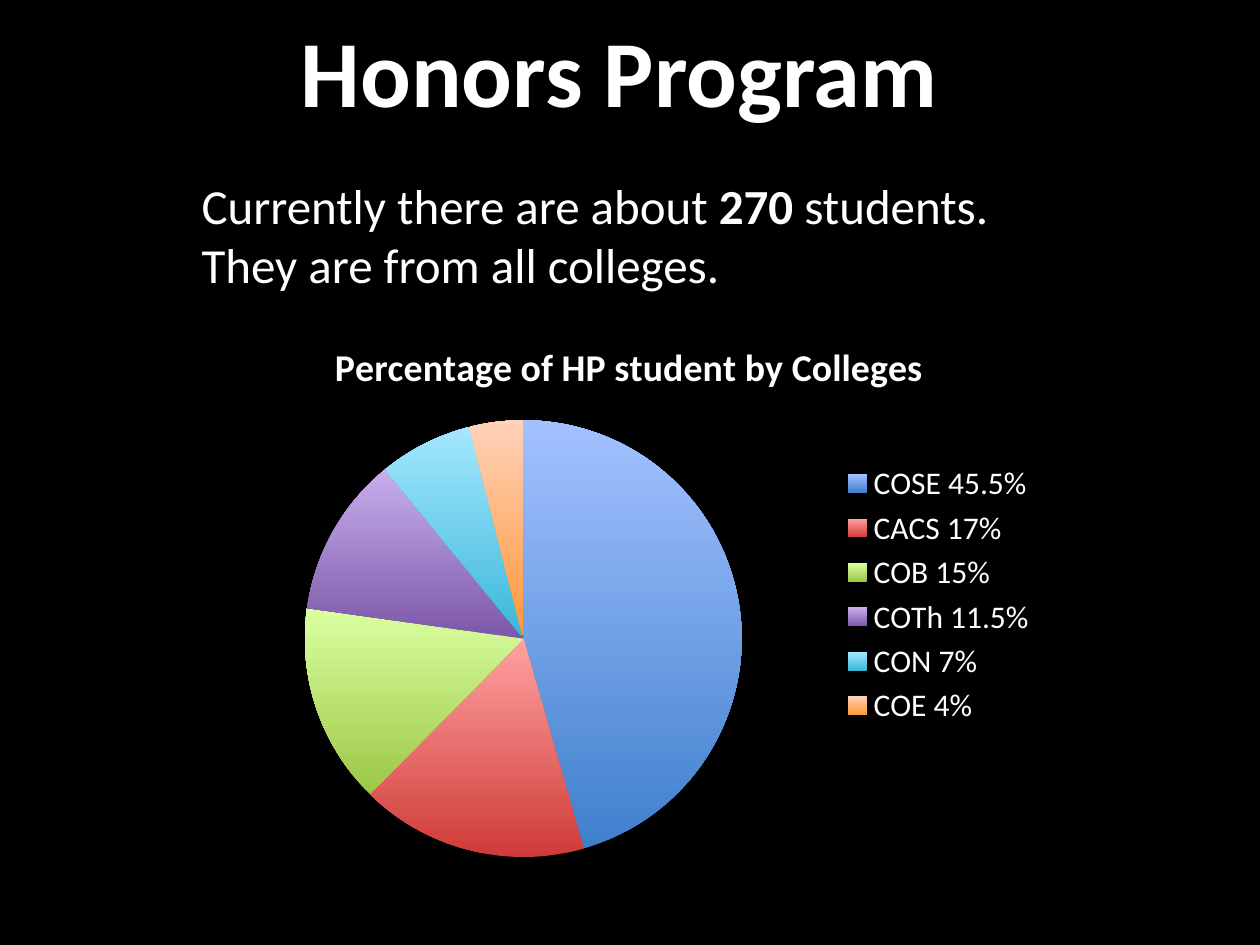
from pptx import Presentation
from pptx import util as u
from pptx.chart import data as chart_data
from pptx.dml import color
from pptx.enum import chart as charts, text

COLORS = {"background": "000000", "text": "FFFFFF"}
COLLEGES = {
    "COSE 45.5%": (46, "3F80CD", "A3C1FF"),
    "CACS 17%": (17, "CF3B38", "FFA2A1"),
    "COB 15%": (15, "9CC746", "DAFFA0"),
    "COTh 11.5%": (12, "7C57A8", "C7AEED"),
    "CON 7%": (7, "39B7D8", "A5E7FF"),
    "COE 4%": (4, "FF9637", "FFD2B9"),
}
CHART_TITLE = "Percentage of HP student by Colleges"


def rgb(value):
    """Return the colour of a hex string."""
    return color.RGBColor.from_string(value)


def style_font(font, size, bold=False):
    """Apply the slide's typeface and text colour."""
    for name, value in {"name": "Calibri", "size": u.Pt(size), "bold": bold}.items():
        setattr(font, name, value)
    font.color.rgb = rgb(COLORS["text"])


def place(region, box):
    """Move a placeholder to a box given in inches."""
    for name, value in zip(("left", "top", "width", "height"), box):
        setattr(region, name, u.Inches(value))


def write_text(region, box, runs, size, align, anchor):
    """Fill a placeholder with one paragraph of (words, bold) runs."""
    place(region, box)
    frame = region.text_frame
    for name, value in {"word_wrap": True, "vertical_anchor": anchor,
                        "auto_size": text.MSO_AUTO_SIZE.NONE}.items():
        setattr(frame, name, value)
    paragraph = frame.paragraphs[0]
    paragraph.alignment = align
    for words, bold in runs:
        run = paragraph.add_run()
        run.text = words
        style_font(run.font, size, bold)


def add_college_pie(slide, box):
    """Draw the shares of the colleges as a pie with a legend."""
    shares = chart_data.CategoryChartData()
    shares.categories = list(COLLEGES)
    shares.add_series(CHART_TITLE, [share for share, _, _ in COLLEGES.values()])
    pie = slide.shapes.add_chart(
        charts.XL_CHART_TYPE.PIE, *map(u.Inches, box), shares).chart
    style_font(pie.font, 18)

    pie.has_title = True
    heading = pie.chart_title.text_frame
    heading.text = CHART_TITLE
    style_font(heading.paragraphs[0].runs[0].font, 21.6, True)

    pie.has_legend = True
    for name, value in {"position": charts.XL_LEGEND_POSITION.RIGHT,
                        "include_in_layout": False}.items():
        setattr(pie.legend, name, value)
    style_font(pie.legend.font, 18)

    plot = pie.plots[0]
    plot.vary_by_categories = True
    for index, (_, bottom, top) in enumerate(COLLEGES.values()):
        slice_format = plot.series[0].points[index].format
        slice_format.line.fill.background()
        fill = slice_format.fill
        fill.gradient()
        fill.gradient_angle = 90
        for stop, shade in zip(fill.gradient_stops, (bottom, top)):
            stop.color.rgb = rgb(shade)


def main():
    """Build the Honors Program slide."""
    deck = Presentation()
    deck.slide_width, deck.slide_height = u.Inches(10), u.Inches(7.5)
    slide = deck.slides.add_slide(deck.slide_layouts[0])
    backdrop = slide.background.fill
    backdrop.solid()
    backdrop.fore_color.rgb = rgb(COLORS["background"])

    title, summary = slide.placeholders
    write_text(title, (0.75, -0.25, 8.5, 1.61), [("Honors Program ", True)],
               54, text.PP_ALIGN.CENTER, text.MSO_ANCHOR.MIDDLE)
    write_text(summary, (1.5, 1.34, 7, 3),
               [("Currently there are about ", False), ("270 ", True),
                ("students. They are from all colleges.", False)],
               28, text.PP_ALIGN.LEFT, text.MSO_ANCHOR.TOP)
    add_college_pie(slide, (1.66, 2.5, 6.67, 4.44))
    deck.save("out.pptx")


if __name__ == "__main__":
    main()
